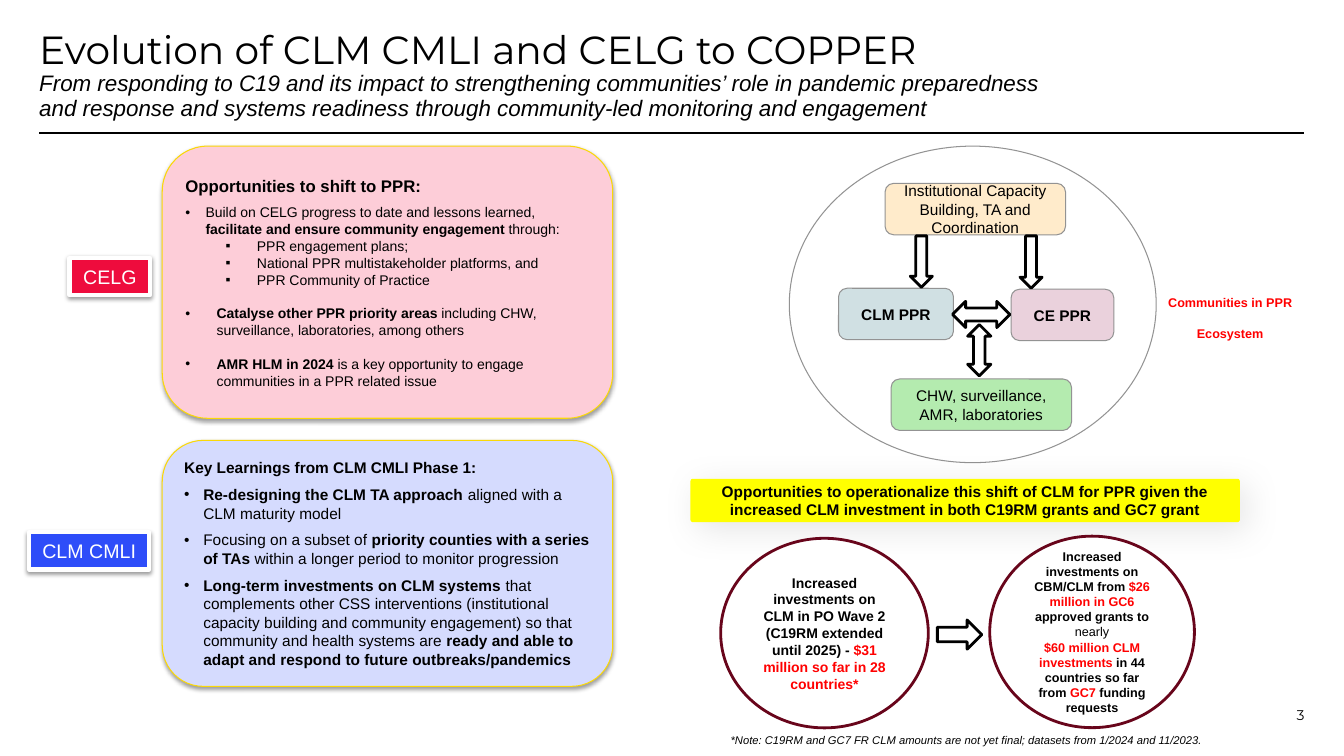
from dataclasses import dataclass

from lxml import etree
from pptx import Presentation
from pptx.dml.color import RGBColor
from pptx.enum.shapes import MSO_CONNECTOR, MSO_SHAPE
from pptx.enum.text import MSO_ANCHOR, MSO_AUTO_SIZE, PP_ALIGN
from pptx.oxml.ns import qn
from pptx.util import Pt

ROUNDED, OVAL, RECTANGLE = MSO_SHAPE.ROUNDED_RECTANGLE, MSO_SHAPE.OVAL, MSO_SHAPE.RECTANGLE
DOWN, UP_DOWN = MSO_SHAPE.DOWN_ARROW, MSO_SHAPE.UP_DOWN_ARROW
RIGHT, LEFT_RIGHT = MSO_SHAPE.RIGHT_ARROW, MSO_SHAPE.LEFT_RIGHT_ARROW
LEFT_ALIGN, CENTER, RIGHT_ALIGN = PP_ALIGN.LEFT, PP_ALIGN.CENTER, PP_ALIGN.RIGHT
TOP, MIDDLE, BOTTOM = MSO_ANCHOR.TOP, MSO_ANCHOR.MIDDLE, MSO_ANCHOR.BOTTOM
STRAIGHT = MSO_CONNECTOR.STRAIGHT
NO_AUTOFIT = MSO_AUTO_SIZE.NONE

BLACK = RGBColor(0x00, 0x00, 0x00)
WHITE = RGBColor(0xFF, 0xFF, 0xFF)
RED = RGBColor(0xFF, 0x00, 0x00)
GRAY = RGBColor(0x93, 0x93, 0x93)
GOLD = RGBColor(0xFA, 0xD8, 0x07)
MAROON = RGBColor(0x68, 0x05, 0x1B)
YELLOW = RGBColor(0xFF, 0xFF, 0x00)
PINK = RGBColor(0xFD, 0xCD, 0xD8)
LAVENDER = RGBColor(0xD5, 0xDB, 0xFE)
CRIMSON = RGBColor(0xEE, 0x0C, 0x3D)
BLUE = RGBColor(0x2E, 0x4D, 0xF9)
CREAM = RGBColor(0xFF, 0xEB, 0xCB)
MAUVE = RGBColor(0xEA, 0xD1, 0xDC)
TEAL = RGBColor(0xD0, 0xE0, 0xE3)
GREEN = RGBColor(0xB4, 0xEB, 0xAF)

BODY, HEADING = "Arial", "Montserrat"
SOFT_SHADOW = (3.1, 1.6, 90, 38)
WIDE_SHADOW = (25, 7, 45, 9)


@dataclass
class Line:
    """One paragraph: a string, or a list of (text, bold, color) runs."""
    content: object
    size: float
    color: RGBColor = BLACK
    bold: bool = False
    italic: bool = False
    font: str = BODY
    align: int = LEFT_ALIGN
    before: float = 0
    after: float = 0
    bullet: str = ""
    indent: float = 0
    hanging: float = 0
    level: int = 0


class SlideBuilder:
    """Draws styled elements on the current slide."""

    def __init__(self, presentation):
        self.slide = presentation.slides.add_slide(presentation.slide_layouts[5])

    def fill_text(self, shape, lines, anchor=MIDDLE, insets=(7.2, 3.6)):
        frame = shape.text_frame
        frame.word_wrap = True
        frame.vertical_anchor = anchor
        frame.margin_left = frame.margin_right = Pt(insets[0])
        frame.margin_top = frame.margin_bottom = Pt(insets[1])
        for index, line in enumerate(lines):
            paragraph = frame.add_paragraph() if index else frame.paragraphs[0]
            self.format_paragraph(paragraph, line)

    def format_paragraph(self, paragraph, line):
        paragraph.alignment = line.align
        paragraph.level = line.level
        paragraph.space_before, paragraph.space_after = Pt(line.before), Pt(line.after)
        if line.bullet:
            properties = paragraph._p.get_or_add_pPr()
            properties.set("marL", str(Pt(line.indent)))
            properties.set("indent", str(-Pt(line.hanging)))
            etree.SubElement(properties, qn("a:buFont")).set("typeface", BODY)
            etree.SubElement(properties, qn("a:buChar")).set("char", line.bullet)
        font = paragraph.font
        font.name, font.size, font.italic = line.font, Pt(line.size), line.italic
        if isinstance(line.content, str):
            font.bold, font.color.rgb = line.bold, line.color
            paragraph.add_run().text = line.content
            return
        for text, bold, color in line.content:
            run = paragraph.add_run()
            run.text = text
            run.font.bold, run.font.color.rgb = bold, color

    def title(self, box, heading, subtitle_lines):
        title = self.slide.shapes.title
        title.left, title.top, title.width, title.height = map(Pt, box)
        self.fill_text(title, [], TOP, (0, 0))
        title.text_frame.auto_size = NO_AUTOFIT
        paragraph = title.text_frame.paragraphs[0]
        paragraph.alignment, paragraph.line_spacing = LEFT_ALIGN, 0.9
        paragraph.font.color.rgb = BLACK
        rows = [(heading, HEADING, 28, False)]
        rows += [(text, BODY, 16, True) for text in subtitle_lines]
        for index, (text, name, size, italic) in enumerate(rows):
            if index:
                paragraph.add_line_break()
            run = paragraph.add_run()
            run.text = text
            run.font.name, run.font.size, run.font.italic = name, Pt(size), italic

    def rule(self, left, right, y):
        line = self.slide.shapes.add_connector(STRAIGHT, Pt(left), Pt(y), Pt(right), Pt(y))
        line.line.color.rgb, line.line.width = BLACK, Pt(0.75)
        etree.SubElement(line.element.spPr, qn("a:effectLst"))

    def text(self, box, lines, anchor=TOP, insets=(7.2, 3.6)):
        self.fill_text(self.slide.shapes.add_textbox(*map(Pt, box)), lines, anchor, insets)

    def shape(self, kind, box, fill, outline=None, width=0.75, lines=(),
              insets=(7.2, 3.6), corner=None, shadow=None):
        shape = self.slide.shapes.add_shape(kind, *map(Pt, box))
        shape.fill.solid()
        shape.fill.fore_color.rgb = fill
        if outline is None:
            shape.line.fill.background()
        else:
            shape.line.color.rgb, shape.line.width = outline, Pt(width)
        shape.shadow.inherit = False
        if corner is not None:
            shape.adjustments[0] = corner
        if shadow:
            self.add_shadow(shape, *shadow)
        if lines:
            self.fill_text(shape, lines, insets=insets)

    def add_shadow(self, shape, blur, distance, angle, opacity):
        effects = shape.element.spPr.find(qn("a:effectLst"))
        outer = etree.SubElement(effects, qn("a:outerShdw"), blurRad=str(Pt(blur)),
                                 dist=str(Pt(distance)), dir=str(angle * 60000),
                                 algn="t", rotWithShape="0")
        color = etree.SubElement(outer, qn("a:srgbClr"), val=str(BLACK))
        etree.SubElement(color, qn("a:alpha"), val=str(opacity * 1000))


def bullet(size, indent, *runs, **options):
    """Return a bulleted line of (text, bold) runs."""
    content = [(text, bold, BLACK) for text, bold in runs]
    return Line(content, size, bullet="•", indent=indent, hanging=indent, **options)


def main():
    presentation = Presentation()
    presentation.slide_width, presentation.slide_height = Pt(960), Pt(540)
    builder = SlideBuilder(presentation)
    builder.rule(28, 931.7, 95)
    builder.title((28, 21.6, 903.6, 67.7), "Evolution of CLM CMLI and CELG to COPPER", [
        "From responding to C19 and its impact to strengthening communities’ role in pandemic preparedness",
        "and response and systems readiness through community-led monitoring and engagement"])

    builder.shape(OVAL, (563.8, 104.4, 262.1, 226.1), WHITE, GRAY)
    for text, left, top, width, fill, bold in [
            ("Institutional Capacity Building, TA and Coordination", 632.2, 131, 128.9, CREAM, False),
            ("CE PPR", 722.2, 206.6, 73.4, MAUVE, True),
            ("CLM PPR", 599, 205.9, 82.1, TEAL, True),
            ("CHW, surveillance, AMR, laboratories", 636.5, 270.7, 128.9, GREEN, False)]:
        builder.shape(ROUNDED, (left, top, width, 36.7), fill, GRAY, insets=(7.2, 7.2),
                      lines=[Line(text, 11, bold=bold, align=CENTER)])
    for kind, box in [(DOWN, (650.2, 168.5, 15.8, 36.7)), (DOWN, (728.6, 168.5, 15.8, 37.4)),
                      (LEFT_RIGHT, (680.4, 215.3, 41, 18.7)), (UP_DOWN, (691.2, 231.8, 16.6, 36.7)),
                      (RIGHT, (669.6, 442.8, 31.7, 20.9))]:
        builder.shape(kind, box, WHITE, BLACK, 2)
    builder.text((825.8, 207.4, 105.8, 28.8), [
        Line("Communities in PPR", 9, RED, True, align=CENTER),
        Line("Ecosystem", 9, RED, True, align=CENTER, before=11)])

    plans = [Line(text, 10, bullet="▪", indent=51.1, hanging=22.3, level=3)
             for text in ("PPR engagement plans;",
                          "National PPR multistakeholder platforms, and",
                          "PPR Community of Practice")]
    opportunities = [
        Line("Opportunities to shift to PPR:", 12, bold=True, after=6),
        bullet(10, 14.4, ("Build on CELG progress to date and lessons learned, ", False),
               ("facilitate and ensure community engagement ", True), ("through:", False)),
        *plans,
        bullet(10, 22.3, ("Catalyse other PPR priority areas ", True),
               ("including CHW, surveillance, laboratories, among others", False), before=12),
        bullet(10, 22.3, ("AMR HLM in 2024 ", True),
               ("is a key opportunity to engage communities in a PPR related issue", False), before=12)]
    learnings = [
        Line("Key Learnings from CLM CMLI Phase 1:", 11, bold=True, after=6),
        bullet(11, 13.7, ("Re-designing the CLM TA approach ", True),
               ("aligned with a CLM maturity model", False), after=6),
        bullet(11, 13.7, ("Focusing on a subset of ", False),
               ("priority counties with a series of TAs ", True),
               ("within a longer period to monitor progression", False), after=6),
        bullet(11, 13.7, ("Long-term investments on CLM systems ", True),
               ("that complements other CSS interventions (institutional capacity building and community "
                "engagement) so that community and health systems are ", False),
               ("ready and able to adapt and respond to future outbreaks/pandemics", True), after=6)]
    for top, height, fill, lines in [(104.4, 194.4, PINK, opportunities),
                                     (314.6, 175.7, LAVENDER, learnings)]:
        builder.shape(ROUNDED, (115.9, top, 321.8, height), fill, GOLD, lines=lines, shadow=SOFT_SHADOW)
    for text, left, top, width, fill in [("CELG", 49.7, 184.3, 57.6, CRIMSON),
                                         ("CLM CMLI", 20.9, 380.2, 85.7, BLUE)]:
        builder.shape(RECTANGLE, (left, top, width, 26.6), fill, WHITE, 3, shadow=SOFT_SHADOW,
                      lines=[Line(text, 14, WHITE, align=CENTER)])

    builder.shape(ROUNDED, (493.2, 342, 392.4, 31), YELLOW, corner=0.055, shadow=WIDE_SHADOW, lines=[
        Line("Opportunities to operationalize this shift of CLM for PPR given the increased CLM "
             "investment in both C19RM grants and GC7 grant", 11, bold=True, align=CENTER)])
    builder.shape(OVAL, (514.8, 384.5, 148.3, 135.4), WHITE, MAROON, 2, [
        Line([("Increased investments on CLM in PO Wave 2 (C19RM extended until 2025) -", True, BLACK),
              (" $31 million so far in 28 countries*", True, RED)], 10, align=CENTER)])
    builder.shape(OVAL, (707, 383, 146.2, 136.8), WHITE, MAROON, 2, [
        Line([("Increased investments on CBM/CLM from ", True, BLACK),
              ("$26 million in GC6 ", True, RED), ("approved grants to ", True, BLACK),
              ("nearly", False, BLACK)], 9, align=CENTER),
        Line([("$60 million CLM investments ", True, RED),
              ("in 44 countries so far from ", True, BLACK), ("GC7", True, RED),
              (" funding requests", True, BLACK)], 9, align=CENTER)])
    builder.text((514.8, 520.6, 355.7, 17.3), [
        Line("*Note: C19RM and GC7 FR CLM amounts are not yet final; datasets from 1/2024 and 11/2023.",
             8, italic=True)])
    builder.text((861.1, 488.2, 70.6, 28.8), [Line("3", 10, font=HEADING, align=RIGHT_ALIGN)],
                 BOTTOM, (0, 0))
    presentation.save("out.pptx")


if __name__ == "__main__":
    main()
